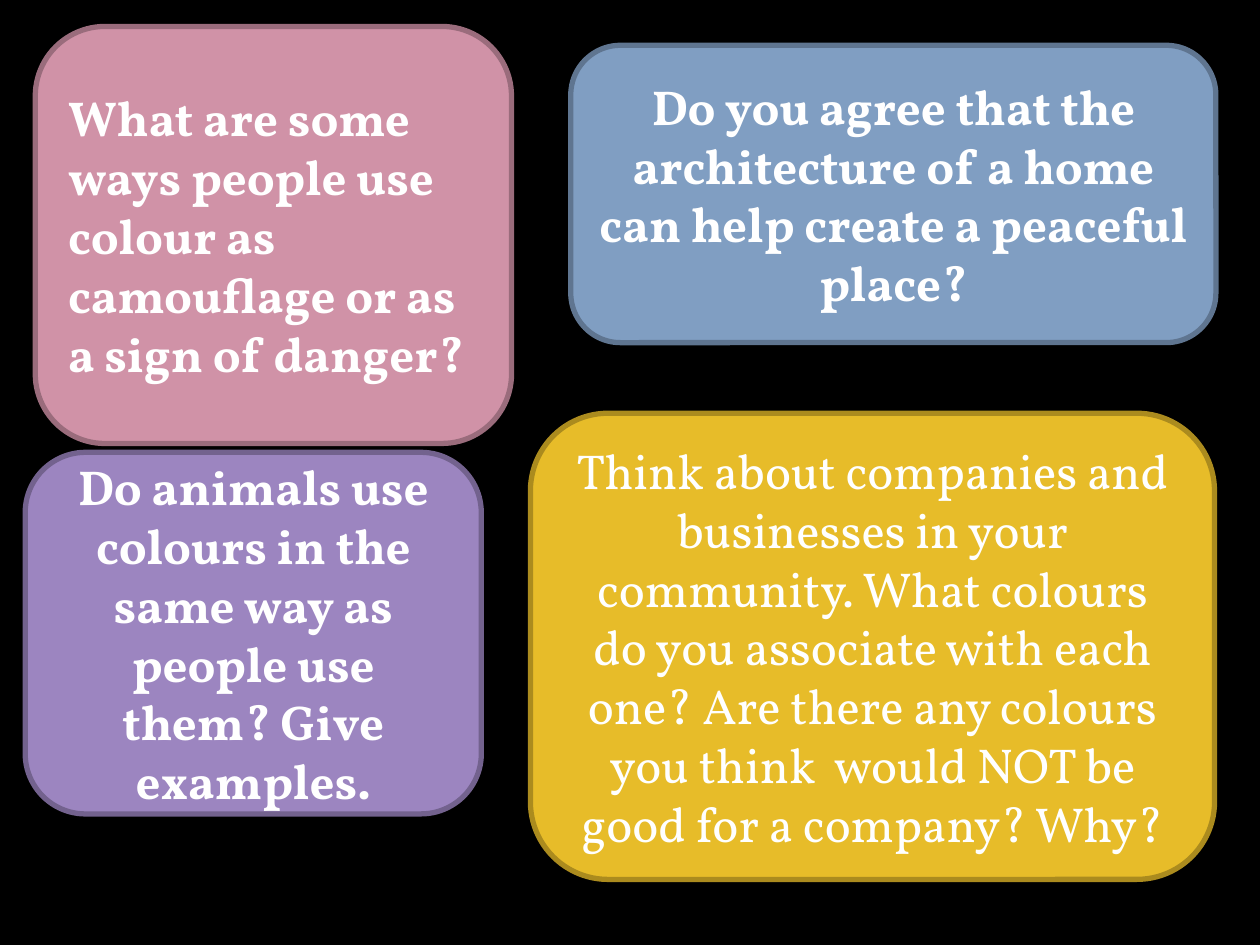
from pptx import Presentation
from pptx.dml.color import RGBColor
from pptx.enum.shapes import MSO_SHAPE
from pptx.enum.text import MSO_ANCHOR, PP_ALIGN
from pptx.util import Inches, Pt

ROUNDED = MSO_SHAPE.ROUNDED_RECTANGLE
MIDDLE = MSO_ANCHOR.MIDDLE
LEFT, CENTER = PP_ALIGN.LEFT, PP_ALIGN.CENTER
BLANK_LAYOUT = 6

COLORS = {
    "background": "000000",
    "text": "FFFFFF",
    "pink": "D092A7",
    "pink_edge": "9A6C7C",
    "blue": "809EC2",
    "blue_edge": "5F7590",
    "purple": "9C85C0",
    "purple_edge": "73628E",
    "gold": "E7BC29",
    "gold_edge": "AB8B1E",
}


class QuestionPage:
    font_name = "Vollkorn"
    font_size = Pt(28)
    edge_width = Pt(3)

    def __init__(self, deck):
        self.page = deck.slides.add_slide(deck.slide_layouts[BLANK_LAYOUT])
        self.paint(self.page.background.fill, "background")

    def paint(self, fill, color):
        fill.solid()
        fill.fore_color.rgb = RGBColor.from_string(COLORS[color])

    def add_card(self, question, color, bounds, align=CENTER, bold=True):
        card = self.page.shapes.add_shape(ROUNDED, *map(Inches, bounds))
        card.shadow.inherit = False
        self.paint(card.fill, color)
        self.paint(card.line.fill, f"{color}_edge")
        card.line.width = self.edge_width

        frame = card.text_frame
        frame.word_wrap = True
        frame.vertical_anchor = MIDDLE
        frame.text = question
        para = frame.paragraphs[0]
        para.alignment = align
        font = para.runs[0].font
        font.name = self.font_name
        font.size = self.font_size
        font.bold = bold
        font.color.rgb = RGBColor.from_string(COLORS["text"])


def main():
    deck = Presentation()
    deck.slide_width, deck.slide_height = Inches(10), Inches(7.5)
    page = QuestionPage(deck)
    page.add_card(
        "What are some ways people use colour as camouflage or as a sign of danger?",
        "pink", (0.28, 0.21, 3.78, 3.31), align=LEFT,
    )
    page.add_card(
        "Do you agree that the architecture of a home can help create a peaceful place?",
        "blue", (4.53, 0.36, 5.12, 2.36),
    )
    page.add_card(
        "Do animals use colours in the same way as people use them? Give examples.",
        "purple", (0.2, 3.59, 3.62, 2.87),
    )
    page.add_card(
        "Think about companies and businesses in your community. "
        "What colours do you associate with each one? "
        "Are there any colours you think  would NOT be good for a company? Why?",
        "gold", (4.21, 3.28, 5.43, 3.7), bold=False,
    )
    deck.save("out.pptx")


if __name__ == "__main__":
    main()
